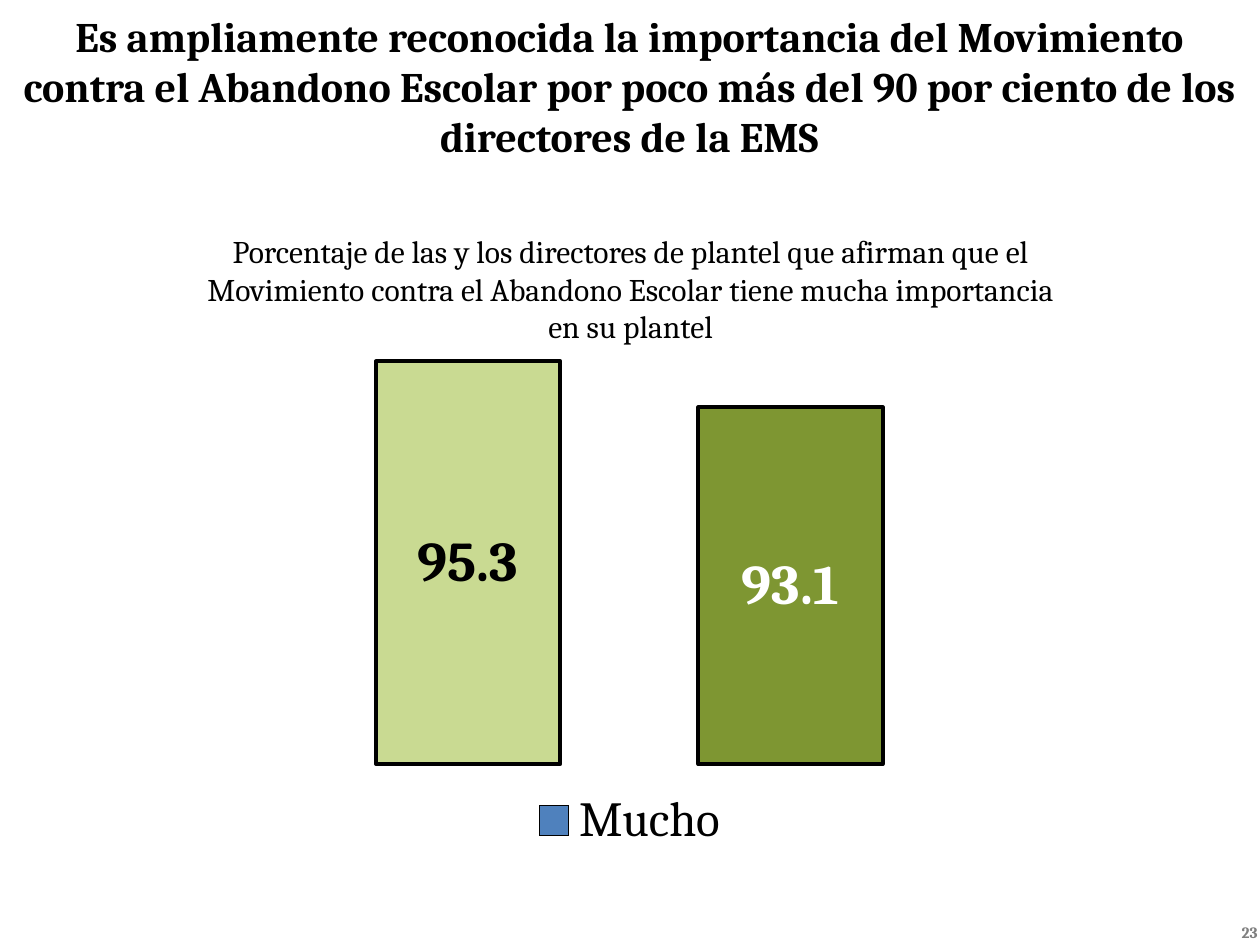
from dataclasses import dataclass

from lxml.etree import SubElement
from pptx import Presentation
from pptx.chart.data import CategoryChartData as Data
from pptx.dml.color import RGBColor as Rgb
from pptx.enum.chart import XL_CHART_TYPE as Kind
from pptx.enum.chart import XL_LABEL_POSITION as Spot
from pptx.enum.chart import XL_LEGEND_POSITION as Side
from pptx.enum.text import MSO_ANCHOR as Anchor
from pptx.enum.text import MSO_AUTO_SIZE as Fit
from pptx.enum.text import PP_ALIGN as Align
from pptx.oxml.ns import qn
from pptx.util import Inches, Pt


@dataclass(frozen=True)
class Theme:
    face: str = "Cambria"
    ink: str = "000000"
    pale: str = "FFFFFF"
    gray: str = "808080"
    blue: str = "4F81BD"
    lime: str = "C9DA92"
    olive: str = "7E9632"
    head: int = 24
    body: int = 18
    base: int = 10
    note: int = 9
    label: int = 32
    legend: int = 28


class Deck:
    """Holds the theme and the slide being filled."""

    def __init__(self, theme):
        self.theme = theme
        self.file = Presentation()
        self.file.slide_width = Inches(10)
        self.file.slide_height = Inches(7.5)
        self.slide = self.file.slides.add_slide(self.file.slide_layouts[5])

    def style(self, font, size, color, bold=False):
        font.name = self.theme.face
        font.size = Pt(size)
        font.bold = bold
        font.color.rgb = Rgb.from_string(color)

    def fill_text(self, shape, words, size, color, bold, align, anchor):
        frame = shape.text_frame
        frame.word_wrap = True
        frame.auto_size = Fit.NONE
        frame.vertical_anchor = anchor
        para = frame.paragraphs[0]
        para.alignment = align
        run = para.add_run()
        run.text = words
        self.style(run.font, size, color, bold)

    def title(self, words, box):
        shape = self.slide.shapes.title
        shape.left, shape.top, shape.width, shape.height = map(Inches, box)
        self.fill_text(shape, words, self.theme.head, self.theme.ink, True,
                       Align.CENTER, Anchor.TOP)

    def text(self, words, box, size, color, bold=False,
             align=Align.CENTER, anchor=Anchor.TOP):
        shape = self.slide.shapes.add_textbox(*map(Inches, box))
        self.fill_text(shape, words, size, color, bold, align, anchor)

    def paint(self, part, color, width):
        part.format.fill.solid()
        part.format.fill.fore_color.rgb = Rgb.from_string(color)
        part.format.line.color.rgb = Rgb.from_string(self.theme.ink)
        part.format.line.width = Pt(width)

    def place(self, chart, area):
        """Fix the inner plot area, in fractions of the chart."""
        plot = chart._chartSpace.chart.plotArea
        old = plot.find(qn("c:layout"))
        if old is not None:
            plot.remove(old)
        layout = plot.makeelement(qn("c:layout"))
        plot.insert(0, layout)
        manual = SubElement(layout, qn("c:manualLayout"))
        rules = [("layoutTarget", "inner"), ("xMode", "edge"),
                 ("yMode", "edge"), *zip("xywh", area)]
        for name, value in rules:
            SubElement(manual, qn("c:" + name)).set("val", str(value))

    def columns(self, name, bars, box, area):
        """Draw one series; each bar is (value, fill, label colour)."""
        look = self.theme
        data = Data(number_format="0.0")
        data.categories = [str(n + 1) for n in range(len(bars))]
        data.add_series(name, [bar[0] for bar in bars])
        chart = self.slide.shapes.add_chart(
            Kind.COLUMN_CLUSTERED, *map(Inches, box), data).chart
        self.style(chart.font, look.base, look.ink)
        chart.has_title = False
        chart.has_legend = True
        chart.legend.position = Side.BOTTOM
        chart.legend.include_in_layout = False
        self.style(chart.legend.font, look.legend, look.ink)

        axis = chart.value_axis
        axis.minimum_scale, axis.maximum_scale = 76, 96
        axis.major_unit = 20
        axis.has_major_gridlines = False
        axis.tick_labels.number_format = "0.0"
        axis.tick_labels.number_format_is_linked = False
        axis.visible = chart.category_axis.visible = False

        plot = chart.plots[0]
        plot.gap_width = 75
        plot.vary_by_categories = False
        series = plot.series[0]
        self.paint(series, look.blue, 0.75)
        labels = series.data_labels
        labels.show_value = True
        labels.number_format = "0.0"
        labels.number_format_is_linked = False
        labels.position = Spot.CENTER
        self.style(labels.font, look.label, look.ink, True)
        for n, (_, fill, color) in enumerate(bars):
            point = series.points[n]
            self.paint(point, fill, 2.25)
            self.style(point.data_label.font, look.label, color, True)
            point.data_label.position = Spot.CENTER
        self.place(chart, area)


def main():
    look = Theme()
    deck = Deck(look)
    deck.title("Es ampliamente reconocida la importancia del Movimiento "
               "contra el Abandono Escolar por poco más del 90 por ciento "
               "de los directores de la EMS", (0.08, 0.03, 9.83, 1.31))
    deck.text("Porcentaje de las y los directores de plantel que afirman "
              "que el Movimiento contra el Abandono Escolar tiene mucha "
              "importancia en su plantel",
              (1.42, 1.79, 7.17, 1.01), look.body, look.ink)
    deck.columns("Mucho",
                 [(95.3, look.lime, look.ink), (93.1, look.olive, look.pale)],
                 (2.33, 2.67, 5.33, 4.14), (0.02, 0.02, 0.96, 0.8))
    deck.text("23", (7.75, 7.29, 2.33, 0.22), look.note, look.gray, True,
              Align.RIGHT, Anchor.MIDDLE)
    deck.file.save("out.pptx")


if __name__ == "__main__":
    main()
